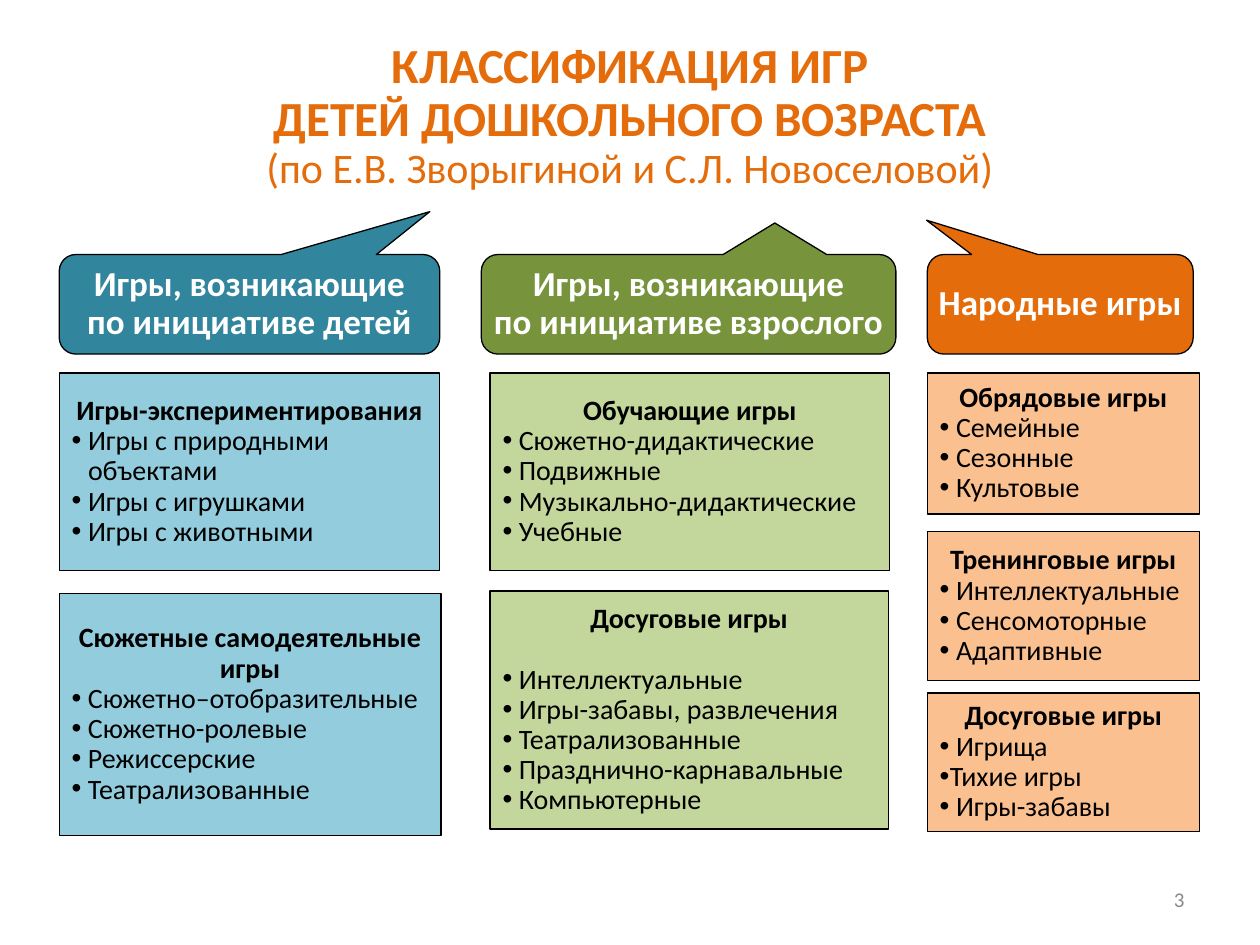
from dataclasses import dataclass

from lxml.etree import SubElement
from pptx import Presentation
from pptx.dml.color import RGBColor
from pptx.enum.shapes import MSO_SHAPE
from pptx.enum.text import MSO_ANCHOR, PP_ALIGN
from pptx.oxml.ns import qn
from pptx.shapes.autoshape import Shape
from pptx.slide import Slide
from pptx.text.text import TextFrame, _Paragraph
from pptx.util import Inches, Pt

FONT = "Calibri"
ORANGE = "E46C0A"
BLACK = "000000"
WHITE = "FFFFFF"
HEADER_TOP = 2.02
HEADER_HEIGHT = 0.79
BULLET_INDENT = 0.13
TIGHT_INDENT = 0.08


@dataclass(frozen=True)
class Card:
    top: float
    width: float
    height: float
    headings: list[str]
    items: list[str]
    heading_gap: float = 0
    tight_item: str = ""


@dataclass(frozen=True)
class Column:
    header_left: float
    header_width: float
    header_lines: list[str]
    pointer: tuple[float, float]
    header_color: str
    card_left: float
    card_color: str
    cards: list[Card]


COLUMNS = [
    Column(0.47, 3.02, ["Игры, возникающие", "по инициативе детей"],
           (0.474, -0.931), "31859C", 0.47, "93CDDD", [
        Card(2.96, 3.02, 1.57, ["Игры-экспериментирования"],
             ["Игры с природными\nобъектами", "Игры с игрушками", "Игры с животными"]),
        Card(4.71, 3.03, 1.92, ["Сюжетные самодеятельные", "игры"],
             ["Сюжетно–отобразительные", "Сюжетно-ролевые", "Режиссерские",
              "Театрализованные"]),
    ]),
    Column(3.82, 3.29, ["Игры, возникающие", "по инициативе взрослого"],
           (0.208, -0.817), "77933C", 3.89, "C3D69B", [
        Card(2.96, 3.17, 1.57, ["Обучающие игры"],
             ["Сюжетно-дидактические", "Подвижные", "Музыкально-дидактические",
              "Учебные"]),
        Card(4.69, 3.16, 1.89, ["Досуговые игры"],
             ["Интеллектуальные", "Игры-забавы, развлечения", "Театрализованные",
              "Празднично-карнавальные", "Компьютерные"], heading_gap=17.5),
    ]),
    Column(7.36, 2.11, ["Народные игры"],
           (-0.503, -0.845), ORANGE, 7.36, "FAC090", [
        Card(2.96, 2.16, 1.12, ["Обрядовые игры"],
             ["Семейные", "Сезонные", "Культовые"]),
        Card(4.22, 2.16, 1.18, ["Тренинговые игры"],
             ["Интеллектуальные", "Сенсомоторные", "Адаптивные"]),
        Card(5.5, 2.16, 1.1, ["Досуговые игры"],
             ["Игрища", "Тихие игры", "Игры-забавы"], tight_item="Тихие игры"),
    ]),
]


def color(value: str) -> RGBColor:
    return RGBColor.from_string(value)


def add_text(paragraph: _Paragraph, text: str, size: float, text_color: str,
             bold: bool = False) -> None:
    for index, line in enumerate(text.split("\n")):
        if index:
            paragraph.add_line_break()
        run = paragraph.add_run()
        run.text = line
        run.font.name = FONT
        run.font.size = Pt(size)
        run.font.bold = bold
        run.font.color.rgb = color(text_color)


def next_paragraph(frame: TextFrame, alignment: PP_ALIGN) -> _Paragraph:
    first = frame.paragraphs[0]
    paragraph = frame.add_paragraph() if first.runs else first
    paragraph.alignment = alignment
    paragraph.line_spacing = 0.9
    return paragraph


def add_bullet(paragraph: _Paragraph, indent: float) -> None:
    properties = paragraph._p.get_or_add_pPr()
    properties.set("marL", str(Inches(indent)))
    properties.set("indent", str(-Inches(indent)))
    SubElement(properties, qn("a:buFont"), typeface="Arial")
    SubElement(properties, qn("a:buChar"), char="•")


def add_box(slide: Slide, kind: MSO_SHAPE, left: float, top: float, width: float,
            height: float, fill: str) -> Shape:
    shape = slide.shapes.add_shape(kind, Inches(left), Inches(top), Inches(width),
                                   Inches(height))
    shape.shadow.inherit = False
    shape.fill.solid()
    shape.fill.fore_color.rgb = color(fill)
    shape.line.color.rgb = color(BLACK)
    shape.line.width = Pt(0.75)
    shape.text_frame.vertical_anchor = MSO_ANCHOR.MIDDLE
    shape.text_frame.word_wrap = True
    return shape


def draw_header(slide: Slide, column: Column) -> None:
    callout = add_box(slide, MSO_SHAPE.ROUNDED_RECTANGULAR_CALLOUT, column.header_left,
                      HEADER_TOP, column.header_width, HEADER_HEIGHT,
                      column.header_color)
    callout.adjustments[0], callout.adjustments[1] = column.pointer
    callout.text_frame.word_wrap = False
    for line in column.header_lines:
        paragraph = next_paragraph(callout.text_frame, PP_ALIGN.CENTER)
        add_text(paragraph, line, 20, WHITE, bold=True)


def draw_card(slide: Slide, card: Card, left: float, fill: str) -> None:
    box = add_box(slide, MSO_SHAPE.RECTANGLE, left, card.top, card.width, card.height,
                  fill)
    for heading in card.headings:
        paragraph = next_paragraph(box.text_frame, PP_ALIGN.CENTER)
        paragraph.space_after = Pt(card.heading_gap)
        add_text(paragraph, heading, 16, BLACK, bold=True)
    for item in card.items:
        paragraph = next_paragraph(box.text_frame, PP_ALIGN.LEFT)
        add_bullet(paragraph, TIGHT_INDENT if item == card.tight_item else BULLET_INDENT)
        add_text(paragraph, item, 16, BLACK)


def draw_title(slide: Slide) -> None:
    title = slide.shapes.title
    title.left, title.top = Inches(0.5), Inches(0.3)
    title.width, title.height = Inches(9), Inches(1.25)
    title.text_frame.vertical_anchor = MSO_ANCHOR.MIDDLE
    paragraph = next_paragraph(title.text_frame, PP_ALIGN.CENTER)
    add_text(paragraph, "КЛАССИФИКАЦИЯ ИГР\nДЕТЕЙ ДОШКОЛЬНОГО ВОЗРАСТА", 28, ORANGE,
             bold=True)
    paragraph.add_line_break()
    add_text(paragraph, "(по Е.В. Зворыгиной и С.Л. Новоселовой)", 24, ORANGE)


def draw_slide_number(slide: Slide) -> None:
    box = slide.shapes.add_textbox(Inches(7.17), Inches(6.95), Inches(2.33), Inches(0.4))
    box.text_frame.word_wrap = True
    box.text_frame.vertical_anchor = MSO_ANCHOR.MIDDLE
    paragraph = next_paragraph(box.text_frame, PP_ALIGN.RIGHT)
    add_text(paragraph, "3", 12, "898989")


def main() -> None:
    presentation = Presentation()
    presentation.slide_width = Inches(10)
    presentation.slide_height = Inches(7.5)
    slide = presentation.slides.add_slide(presentation.slide_layouts[5])
    draw_title(slide)
    for column in COLUMNS:
        draw_header(slide, column)
        for card in column.cards:
            draw_card(slide, card, column.card_left, column.card_color)
    draw_slide_number(slide)
    presentation.save("out.pptx")


if __name__ == "__main__":
    main()
